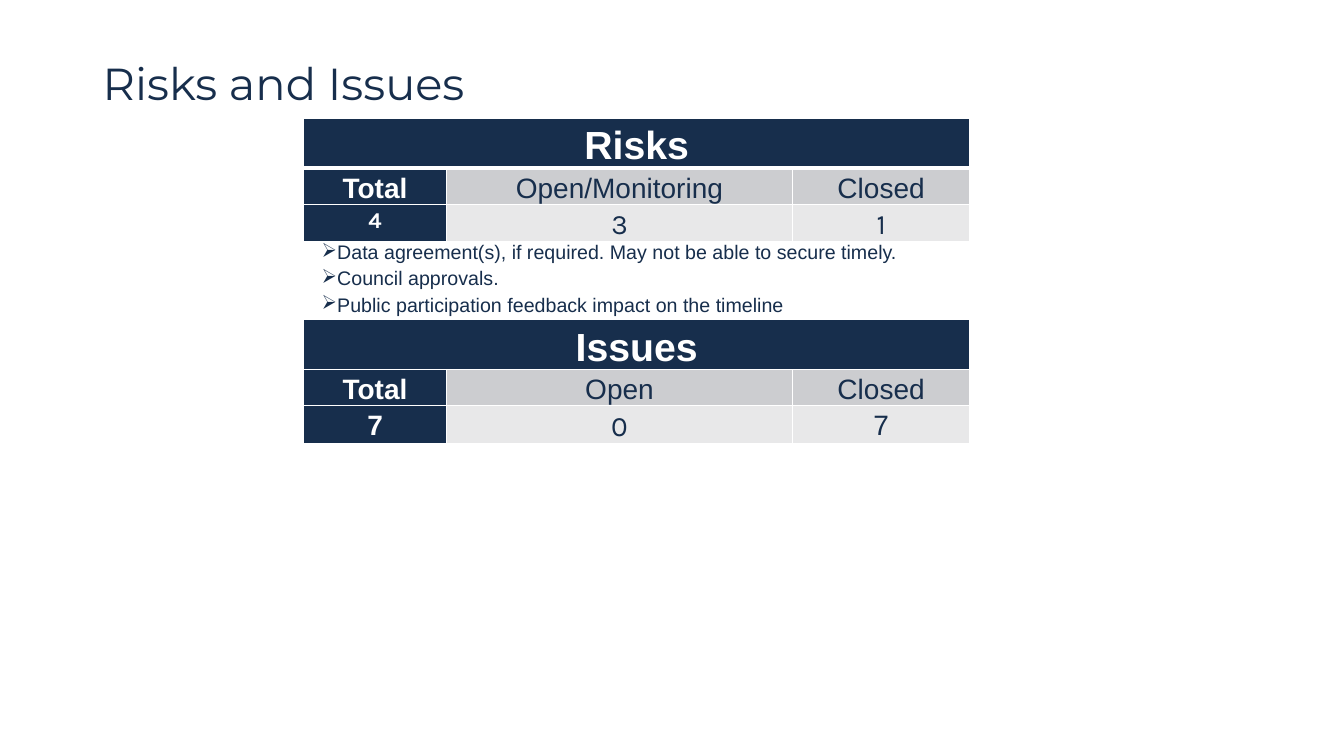
from lxml import etree
from pptx import Presentation
from pptx.dml.color import RGBColor
from pptx.enum.text import MSO_ANCHOR, PP_ALIGN
from pptx.oxml.ns import qn
from pptx.util import Inches, Pt

CENTER = PP_ALIGN.CENTER
LEFT = PP_ALIGN.LEFT
MIDDLE = MSO_ANCHOR.MIDDLE

NAVY, WHITE, GREY, PALE = "172E4C", "FFFFFF", "CCCDD0", "E8E8E9"
COLUMN_WIDTHS = [1.42, 3.43, 1.76]
ROW_HEIGHTS = [0.4, 0.29, 0.28, 0.77, 0.4, 0.29, 0.29, 1.1]

RISK_NOTES = [
    "Data agreement(s), if required. May not be able to secure timely.",
    "Council approvals.",
    "Public participation feedback impact on the timeline",
]
# Each section: first row, heading, labels, counts as (text, font, size)
SECTIONS = [
    (0, "Risks", ["Total", "Open/Monitoring", "Closed"],
     [("4", "Karla", 16), ("3", "Karla", 20), ("1", "Karla", 20)]),
    (4, "Issues", ["Total", "Open", "Closed"],
     [("7", "Arial", 20), ("0", "Karla", 20), ("7", "Arial", 20)]),
]
NOTES_ROW, EMPTY_ROW = 3, 7


def rgb(value):
    return RGBColor.from_string(value)


class SlideBuilder:
    def __init__(self, slide):
        self.slide = slide

    def format_runs(self, paragraph, font, size, color, bold=False):
        for run in paragraph.runs:
            run.font.name = font
            run.font.size = Pt(size)
            run.font.color.rgb = rgb(color)
            run.font.bold = bold

    def title(self, text, left, top, width, height):
        box = self.slide.shapes.add_textbox(
            Inches(left), Inches(top), Inches(width), Inches(height))
        frame = box.text_frame
        frame.word_wrap = True
        frame.vertical_anchor = MIDDLE
        frame.text = text
        paragraph = frame.paragraphs[0]
        paragraph.line_spacing = 0.9
        self.format_runs(paragraph, "Montserrat", 32, NAVY)

    def table(self, left, top):
        """Add an empty white table with thin white borders."""
        table = self.slide.shapes.add_table(
            len(ROW_HEIGHTS), len(COLUMN_WIDTHS), Inches(left), Inches(top),
            Inches(sum(COLUMN_WIDTHS)), Inches(sum(ROW_HEIGHTS))).table
        table.first_row = False
        table.horz_banding = False
        for column, width in zip(table.columns, COLUMN_WIDTHS):
            column.width = Inches(width)
        for row, height in zip(table.rows, ROW_HEIGHTS):
            row.height = Inches(height)
        for cell in table.iter_cells():
            cell.margin_left = cell.margin_right = Inches(0.18)
            cell.margin_top = cell.margin_bottom = 0
            self.fill(cell, WHITE)
            self.borders(cell)
        return table

    def fill(self, cell, color):
        cell.fill.solid()
        cell.fill.fore_color.rgb = rgb(color)

    def borders(self, cell, bottom=1):
        properties = cell._tc.get_or_add_tcPr()
        widths = {"a:lnL": 1, "a:lnR": 1, "a:lnT": 1, "a:lnB": bottom}
        for position, (tag, width) in enumerate(widths.items()):
            for previous in properties.findall(qn(tag)):
                properties.remove(previous)
            line = etree.Element(qn(tag), w=str(Pt(width)))
            solid = etree.SubElement(line, qn("a:solidFill"))
            etree.SubElement(solid, qn("a:srgbClr"), val=WHITE)
            properties.insert(position, line)

    def span_row(self, table, row):
        table.cell(row, 0).merge(table.cell(row, len(COLUMN_WIDTHS) - 1))
        return table.cell(row, 0)

    def centered_cell(self, cell, text, fill, font="Arial", size=20):
        """Write one centred line; dark cells get bold white text."""
        self.fill(cell, fill)
        cell.text_frame.text = text
        paragraph = cell.text_frame.paragraphs[0]
        paragraph.alignment = CENTER
        paragraph.line_spacing = 1.15
        paragraph.space_after = Pt(3)
        dark = fill == NAVY
        self.format_runs(paragraph, font, size, WHITE if dark else NAVY, dark)

    def bullet_cell(self, cell, lines):
        cell.text_frame.text = "\n".join(lines)
        for paragraph in cell.text_frame.paragraphs:
            paragraph.alignment = LEFT
            paragraph.space_after = Pt(3)
            properties = paragraph._p.get_or_add_pPr()
            properties.set("marL", "0")
            properties.set("indent", "0")
            etree.SubElement(properties, qn("a:buChar"), char="➢")
            self.format_runs(paragraph, "Arial", 14, NAVY)

    def section(self, table, first_row, heading, labels, counts):
        heading_cell = self.span_row(table, first_row)
        self.centered_cell(heading_cell, heading, NAVY, size=28)
        for column, (label, count) in enumerate(zip(labels, counts)):
            label_fill, count_fill = (GREY, PALE) if column else (NAVY, NAVY)
            self.centered_cell(table.cell(first_row + 1, column), label, label_fill)
            self.centered_cell(table.cell(first_row + 2, column),
                               count[0], count_fill, *count[1:])


def main():
    presentation = Presentation()
    presentation.slide_width = Inches(13.33)
    presentation.slide_height = Inches(7.5)
    builder = SlideBuilder(
        presentation.slides.add_slide(presentation.slide_layouts[6]))

    table = builder.table(3.01, 1.17)
    for section in SECTIONS:
        builder.section(table, *section)
    for column in range(len(COLUMN_WIDTHS)):
        builder.borders(table.cell(0, column), bottom=3)
    builder.bullet_cell(builder.span_row(table, NOTES_ROW), RISK_NOTES)
    builder.span_row(table, EMPTY_ROW)
    builder.title("Risks and Issues", 0.92, 0.55, 5.4, 0.61)

    presentation.save("out.pptx")


if __name__ == "__main__":
    main()
